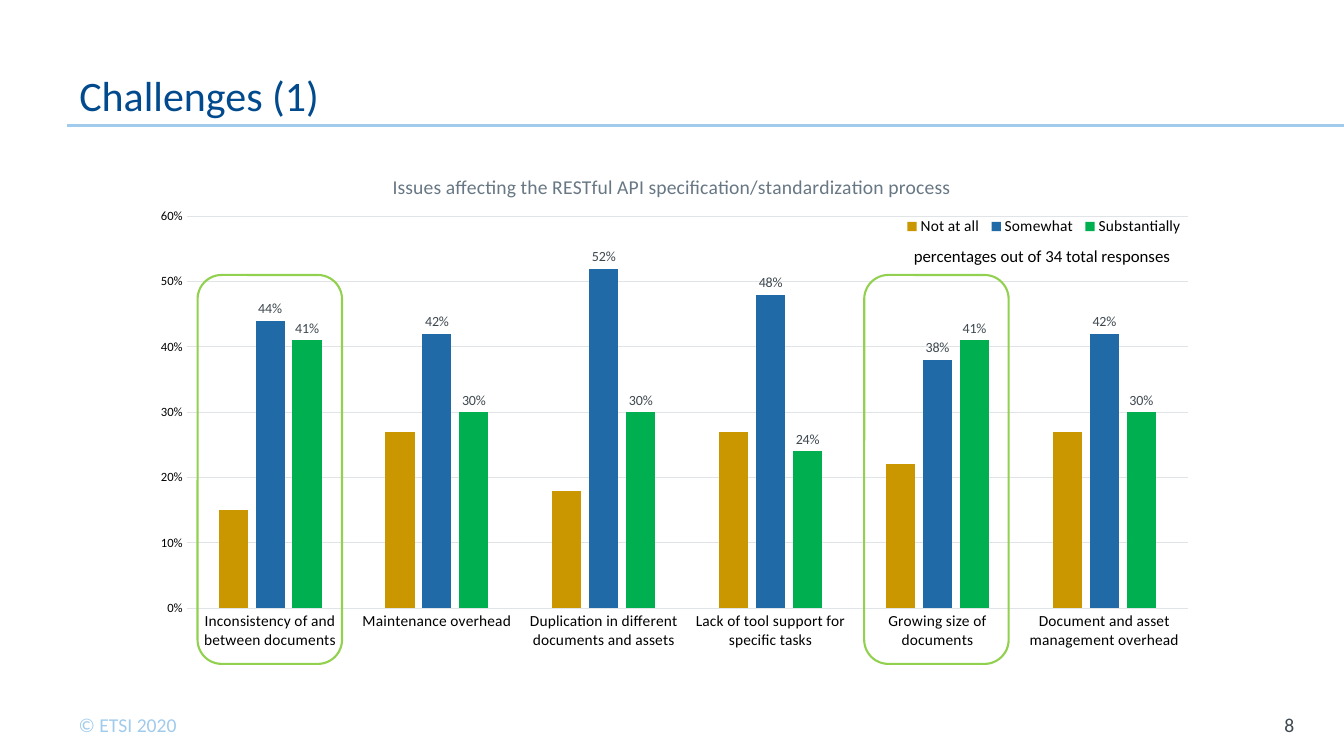
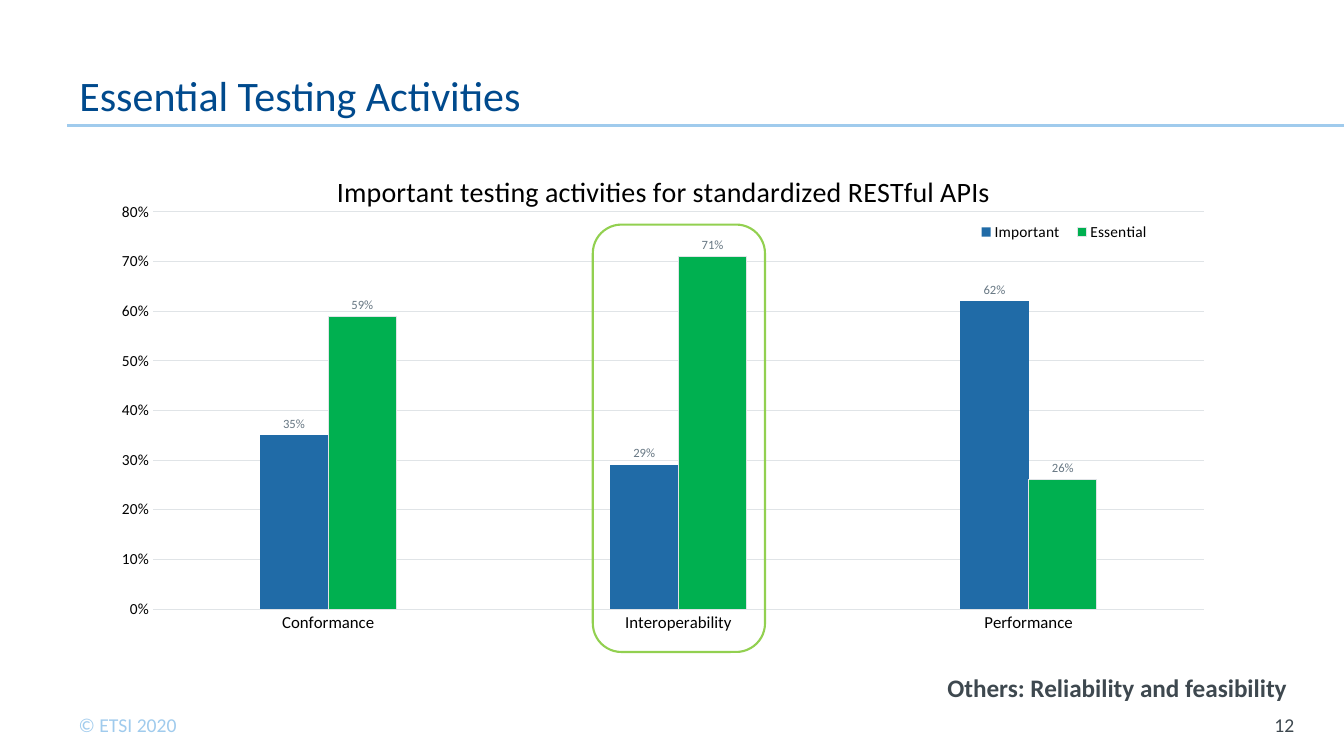
import dataclasses

import lxml.etree
import pptx
import pptx.chart.data
import pptx.dml.color
import pptx.enum.chart
import pptx.enum.shapes
import pptx.enum.text
import pptx.oxml.ns
import pptx.util

Cm = pptx.util.Cm
Pt = pptx.util.Pt
qn = pptx.oxml.ns.qn
Align = pptx.enum.text.PP_ALIGN
Anchor = pptx.enum.text.MSO_ANCHOR
Kind = pptx.enum.chart


@dataclasses.dataclass(frozen=True)
class Theme:
    """Colours, font and type sizes of the deck."""
    font: str = "Calibri"
    navy: str = "004A8D"
    sky: str = "A0CBED"
    ink: str = "3E484F"
    slate: str = "677783"
    black: str = "000000"
    grid: str = "E0E4E7"
    gold: str = "CA9700"
    blue: str = "206BA7"
    green: str = "00B050"
    lime: str = "92D050"
    head: int = 30
    large: int = 20
    note: int = 18
    foot: int = 14
    body: int = 12
    key: int = 11
    label: int = 10
    tiny: int = 9


T = Theme()


def tint(code):
    """Return the colour for a hex code."""
    return pptx.dml.color.RGBColor.from_string(code)


def style(font, size, color, bold=False):
    """Set face, size, colour and weight of a font."""
    font.name = T.font
    font.size = Pt(size)
    font.color.rgb = tint(color)
    font.bold = bold


def stroke(line, color, width):
    """Set colour and width of a line."""
    line.color.rgb = tint(color)
    line.width = Pt(width)


def write(slide, box, text, size, color, bold=False, align=Align.LEFT,
          anchor=Anchor.TOP, pad=(0.25, 0.13, 0.25, 0.13), wrap=True):
    """Add a one-paragraph text box and return its paragraph."""
    frame = slide.shapes.add_textbox(*map(Cm, box)).text_frame
    frame.word_wrap = wrap
    frame.vertical_anchor = anchor
    (frame.margin_left, frame.margin_top,
     frame.margin_right, frame.margin_bottom) = map(Cm, pad)
    para = frame.paragraphs[0]
    para.text = text
    para.alignment = align
    style(para.runs[0].font, size, color, bold)
    return para


def start(deck, title, number):
    """Add a slide with title, rule, footer and page number."""
    slide = deck.slides.add_slide(deck.slide_layouts[6])
    rule = slide.shapes.add_connector(
        pptx.enum.shapes.MSO_CONNECTOR.STRAIGHT,
        Cm(1.7), Cm(3.17), deck.slide_width, Cm(3.17))
    stroke(rule.line, T.sky, 2.25)
    lxml.etree.SubElement(rule._element.spPr, qn("a:effectLst"))
    write(slide, (1.73, 17.83, 3.4, 0.86), "© ETSI 2020", T.foot, T.sky)
    write(slide, (31.12, 17.75, 1.75, 1.02), str(number), T.foot, T.ink,
          align=Align.RIGHT, anchor=Anchor.MIDDLE, pad=(0, 0.13, 0.25, 0.13))
    para = write(slide, (1.7, 0.76, 26.47, 2.41), title, T.head, T.navy,
                 anchor=Anchor.BOTTOM, pad=(0.3, 0.15, 0.3, 0.15))
    para.line_spacing = Pt(30)
    return slide


def ring(slide, box):
    """Outline a group of columns with a rounded frame."""
    shape = slide.shapes.add_shape(
        pptx.enum.shapes.MSO_SHAPE.ROUNDED_RECTANGLE, *map(Cm, box))
    shape.shadow.inherit = False
    shape.fill.background()
    stroke(shape.line, T.lime, 1.5)


def place(part, spot, index, inner=False):
    """Fix a chart part at fractions of the chart area."""
    for old in part.findall(qn("c:layout")):
        part.remove(old)
    layout = part.makeelement(qn("c:layout"), {})
    part.insert(index, layout)
    manual = lxml.etree.SubElement(layout, qn("c:manualLayout"))
    pairs = [("layoutTarget", "inner")] if inner else []
    pairs += [("xMode", "edge"), ("yMode", "edge"), *zip("xywh", spot)]
    for name, value in pairs:
        lxml.etree.SubElement(manual, qn("c:" + name), val=str(value))


def axes(chart, top, names, ticks):
    """Style both axes and the grid."""
    cat, val = chart.category_axis, chart.value_axis
    for axis, size in ((cat, names), (val, ticks)):
        axis.major_tick_mark = Kind.XL_TICK_MARK.NONE
        axis.minor_tick_mark = Kind.XL_TICK_MARK.NONE
        style(axis.tick_labels.font, size, T.black)
    stroke(cat.format.line, T.grid, 0.75)
    val.format.line.fill.background()
    val.minimum_scale, val.maximum_scale, val.major_unit = 0, top, 0.1
    val.tick_labels.number_format = "0%"
    val.tick_labels.number_format_is_linked = False
    stroke(val.major_gridlines.format.line, T.grid, 0.75)


def label(series, size, color):
    """Show percentages above the columns of a series."""
    labels = series.data_labels
    labels.show_value = True
    labels.number_format = "0%"
    labels.number_format_is_linked = False
    labels.position = Kind.XL_LABEL_POSITION.OUTSIDE_END
    style(labels.font, size, color)


def graph(slide, box, title, cats, rows, gap, overlap, spots):
    """Add a column chart with title and legend at set spots."""
    data = pptx.chart.data.CategoryChartData(number_format="0%")
    data.categories = cats
    for name, color, values in rows:
        data.add_series(name, values)
    chart = slide.shapes.add_chart(
        Kind.XL_CHART_TYPE.COLUMN_CLUSTERED, *map(Cm, box), data).chart
    style(chart.font, T.label, T.ink)
    text, size, color = title
    para = chart.chart_title.text_frame.paragraphs[0]
    para.text = text
    style(para.runs[0].font, size, color)
    chart.has_legend = True
    chart.legend.position = Kind.XL_LEGEND_POSITION.BOTTOM
    chart.legend.include_in_layout = False
    style(chart.legend.font, T.key, T.black)
    plot = chart.plots[0]
    plot.vary_by_categories = False
    plot.gap_width, plot.overlap = gap, overlap
    for series, (name, color, values) in zip(plot.series, rows):
        series.format.fill.solid()
        series.format.fill.fore_color.rgb = tint(color)
    root = chart._chartSpace.chart
    for name, spot, index in zip(("title", "plotArea", "legend"),
                                 spots, (1, 0, 1)):
        place(root.find(qn("c:" + name)), spot, index, name == "plotArea")
    return chart


def issues(deck):
    """Build the slide on challenges."""
    slide = start(deck, "Challenges (1)", 8)
    cats = ("Inconsistency of and between documents", "Maintenance overhead",
            "Duplication in different documents and assets",
            "Lack of tool support for specific tasks",
            "Growing size of documents",
            "Document and asset management overhead")
    rows = (("Not at all", T.gold, (0.15, 0.27, 0.18, 0.27, 0.22, 0.27)),
            ("Somewhat", T.blue, (0.44, 0.42, 0.52, 0.48, 0.38, 0.42)),
            ("Substantially", T.green, (0.41, 0.3, 0.3, 0.24, 0.41, 0.3)))
    title = ("Issues affecting the RESTful API "
             "specification/standardization process", T.foot, T.slate)
    spots = ((0.23, 0.03), (0.04, 0.12, 0.94, 0.76), (0.71, 0.11, 0.27, 0.06))
    chart = graph(slide, (3.63, 3.89, 26.84, 13), title, cats, rows,
                  219, -27, spots)
    axes(chart, 0.6, T.key, T.tiny)
    for series in list(chart.plots[0].series)[1:]:
        label(series, T.label, T.ink)
    write(slide, (22.78, 6.05, 7.59, 0.76),
          "percentages out of 34 total responses", T.body, T.black)
    for left in (4.98, 21.78):
        ring(slide, (left, 6.93, 3.64, 9.8))


def tests(deck):
    """Build the slide on testing activities."""
    slide = start(deck, "Essential Testing Activities", 12)
    rows = (("Important", T.blue, (0.35, 0.29, 0.62)),
            ("Essential", T.green, (0.59, 0.71, 0.26)))
    title = ("Important testing activities for standardized RESTful APIs",
             T.large, T.black)
    spots = ((0.21, 0.03), (0.05, 0.12, 0.94, 0.79), (0.78, 0.13, 0.17, 0.06))
    chart = graph(slide, (2.45, 3.82, 28.17, 12.67), title,
                  ("Conformance", "Interoperability", "Performance"), rows,
                  313, 0, spots)
    axes(chart, 0.8, T.body, T.key)
    for series in chart.plots[0].series:
        label(series, T.tiny, T.slate)
    stroke(chart.plots[0].series[1].format.line, T.grid, 0.75)
    write(slide, (23.42, 16.81, 9.27, 1.02),
          "Others: Reliability and feasibility", T.note, T.ink, True,
          align=Align.RIGHT, wrap=False)
    ring(slide, (14.94, 5.66, 4.34, 10.77))


def main():
    """Build and save the deck."""
    deck = pptx.Presentation()
    deck.slide_width, deck.slide_height = Cm(33.87), Cm(19.05)
    issues(deck)
    tests(deck)
    deck.save("out.pptx")


if __name__ == "__main__":
    main()
